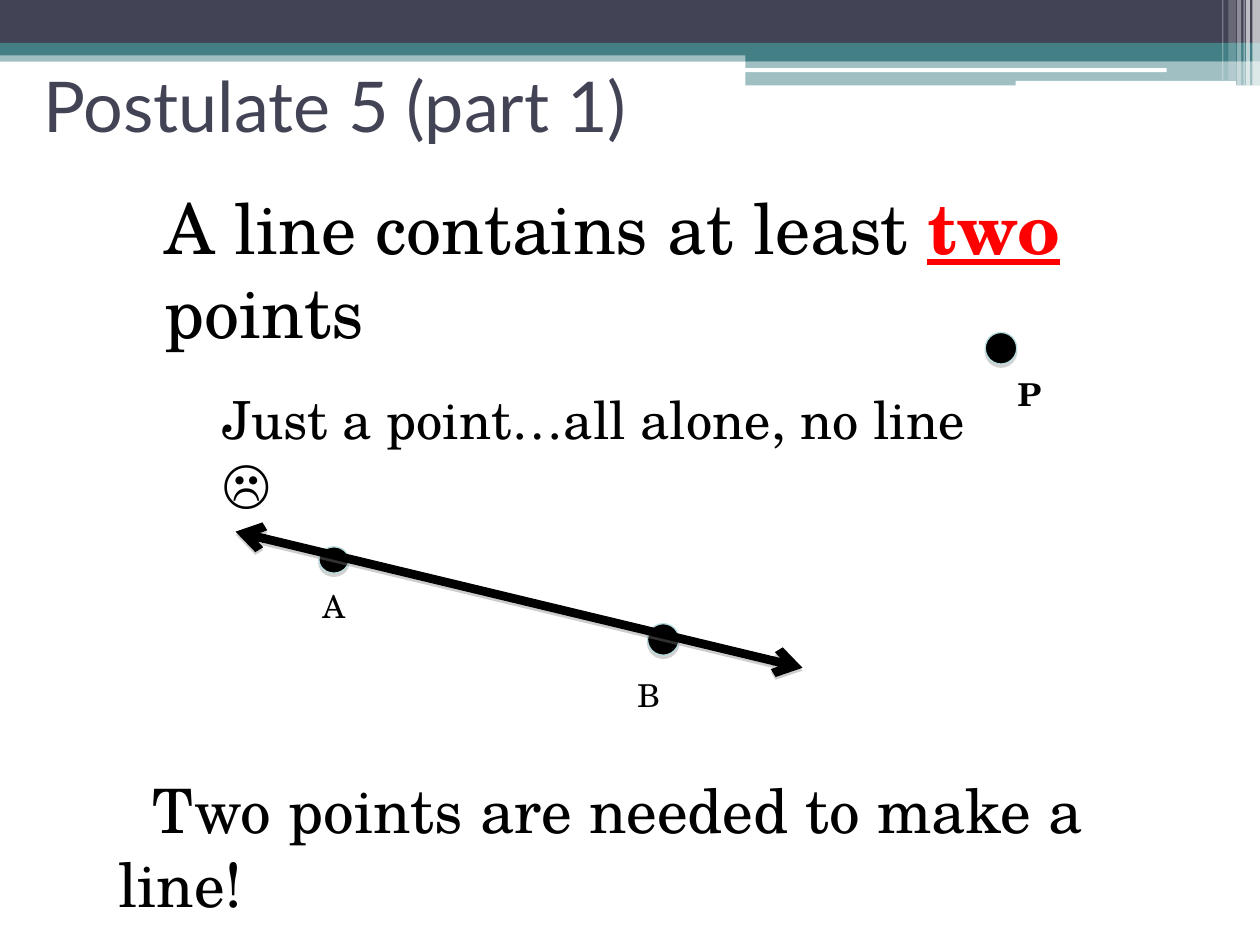
from lxml import etree
from pptx import Presentation
from pptx.dml.color import RGBColor
from pptx.enum.shapes import MSO_CONNECTOR, MSO_SHAPE
from pptx.enum.text import MSO_ANCHOR, PP_ALIGN
from pptx.oxml.ns import qn
from pptx.util import Pt

RECT, ROUNDED, OVAL = MSO_SHAPE.RECTANGLE, MSO_SHAPE.ROUNDED_RECTANGLE, MSO_SHAPE.OVAL
STRAIGHT = MSO_CONNECTOR.STRAIGHT
TOP, MIDDLE = MSO_ANCHOR.TOP, MSO_ANCHOR.MIDDLE
LEFT, CENTER = PP_ALIGN.LEFT, PP_ALIGN.CENTER

NAVY, TEAL, PALE = "424456", "438086", "B6DCDF"
BLACK, WHITE, RED = "000000", "FFFFFF", "FF0000"
BODY_FONT, TITLE_FONT = "TeX Gyre Schola", "Lato"


def rgb(color):
    return RGBColor.from_string(color)


def add_alpha(color_el, percent):
    etree.SubElement(color_el, qn("a:alpha"), val=str(percent * 1000))


def add_block(s, kind, box, color, opacity=100):
    sp = s.shapes.add_shape(kind, *map(Pt, box))
    sp.shadow.inherit = False
    sp.fill.solid()
    sp.fill.fore_color.rgb = rgb(color)
    sp.line.fill.background()
    if opacity < 100:
        add_alpha(sp.fill._xPr.find(".//" + qn("a:srgbClr")), opacity)
    return sp


def add_drop_shadow(sp, opacity, distance):
    sp_pr = sp._element.spPr
    effects = sp_pr.find(qn("a:effectLst"))
    if effects is None:
        effects = etree.SubElement(sp_pr, qn("a:effectLst"))
    shadow = etree.SubElement(effects, qn("a:outerShdw"), blurRad="0",
                              dist=str(Pt(distance)), dir="5400000", rotWithShape="0")
    add_alpha(etree.SubElement(shadow, qn("a:srgbClr"), val="808080"), opacity)


def add_point(s, cx, cy, width=18, height=18):
    sp = add_block(s, OVAL, (cx - width / 2, cy - height / 2, width, height), BLACK)
    sp.line.color.rgb = rgb(PALE)
    sp.line.width = Pt(0.75)
    add_drop_shadow(sp, 35, 1.8)


def add_double_arrow(s, x1, y1, x2, y2):
    line = s.shapes.add_connector(STRAIGHT, Pt(x1), Pt(y1), Pt(x2), Pt(y2))
    line.line.color.rgb = rgb(BLACK)
    line.line.width = Pt(5)
    ln = line.line._get_or_add_ln()
    for end in ("a:headEnd", "a:tailEnd"):
        etree.SubElement(ln, qn(end), type="arrow")
    add_drop_shadow(line, 38, 1.6)


def add_run(p, text, size, font=BODY_FONT, color=BLACK, bold=False, underline=False):
    r = p.add_run()
    r.text = text
    r.font.size = Pt(size)
    r.font.name = font
    r.font.color.rgb = rgb(color)
    r.font.bold = bold
    r.font.underline = underline


def add_text(s, box, text, size, anchor=TOP, align=LEFT, indent=0, wrap=True, **style):
    tf = s.shapes.add_textbox(*map(Pt, box)).text_frame
    tf.word_wrap = wrap
    tf.vertical_anchor = anchor
    p = tf.paragraphs[0]
    p.alignment = align
    if indent:
        p._p.get_or_add_pPr().set("indent", str(Pt(indent)))
    add_run(p, text, size, **style)
    return p


def add_header_band(s):
    for kind, box, color, opacity in (
        (RECT, (0, 28.8, 720, 6.5), TEAL, 50),
        (RECT, (0, 0, 720, 24.5), NAVY, 100),
        (RECT, (0, 24.5, 720, 7.2), TEAL, 100),
        (RECT, (426, 28, 294, 7), TEAL, 100),
        (RECT, (426, 34.6, 294, 14.2), TEAL, 50),
        (ROUNDED, (425.5, 39, 241.2, 2.2), WHITE, 100),
        (ROUNDED, (580.3, 46.2, 126, 2.9), WHITE, 100),
    ):
        add_block(s, kind, box, color, opacity)

    # Translucent vertical stripes at the right edge: left, width, height, opacity
    for x, width, height, opacity in (
        (715.7, 4.3, 49, 65), (712, 2.2, 49, 65), (710.6, 0.7, 49, 60),
        (707, 2.2, 49, 40), (702, 4.3, 46, 20), (698.4, 0.7, 46, 30),
    ):
        add_block(s, RECT, (x, 0, width, height), WHITE, opacity)


def main():
    prs = Presentation()
    prs.slide_width, prs.slide_height = Pt(720), Pt(540)
    s = prs.slides.add_slide(prs.slide_layouts[6])

    add_header_band(s)
    add_text(s, (18, 18, 648, 84), "Postulate 5 (part 1)", 40,
             anchor=MIDDLE, font=TITLE_FONT, color=NAVY)

    # Postulate
    p = add_text(s, (87, 102, 585, 55.5), "A line contains at least ", 40)
    add_run(p, "two", 40, color=RED, bold=True, underline=True)
    add_run(p, " points", 40)

    # Lone point P
    add_point(s, 572, 199)
    add_text(s, (120, 217.5, 456.5, 80), "Just a point…all alone, no line ☹", 30)
    add_text(s, (574.5, 211, 26.6, 29), "P", 18, wrap=False, bold=True)

    # Line through A and B
    add_point(s, 190.8, 320, 17, 15)
    add_point(s, 379, 365.4)
    add_double_arrow(s, 134.6, 303.8, 458.6, 381.6)
    for label, x, y in (("A", 172.8, 324), ("B", 352.8, 374.4)):
        add_text(s, (x, y, 36, 45), label, 18, anchor=MIDDLE, align=CENTER)

    # Conclusion
    add_text(s, (60.5, 437.8, 569.5, 50), "Two points are needed to make a line!", 35,
             indent=19.5)

    prs.save("out.pptx")


if __name__ == "__main__":
    main()
